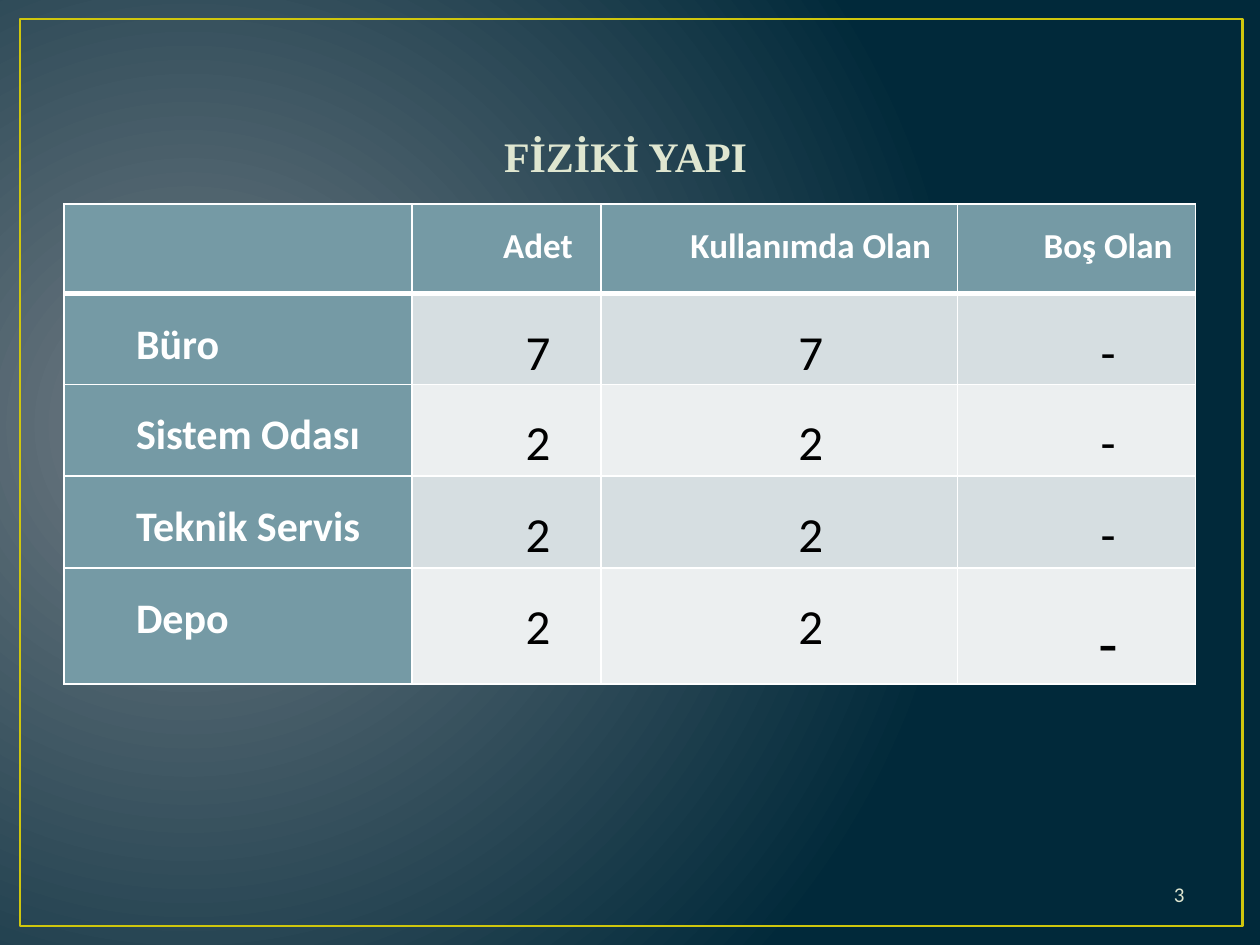
from lxml.etree import SubElement
from pptx import Presentation
from pptx.dml.color import RGBColor
from pptx.enum.shapes import MSO_SHAPE
from pptx.enum.text import MSO_ANCHOR, PP_ALIGN
from pptx.oxml.ns import qn
from pptx.util import Inches, Pt

COLORS = {
    "glow": "717C84",
    "night": "01293A",
    "frame": "CFC60D",
    "cream": "DFE6D0",
    "teal": "759AA5",
    "band_dark": "D6DEE1",
    "band_light": "ECEFF0",
    "white": "FFFFFF",
    "black": "000000",
}
COLUMN_WIDTHS = [2.76, 1.5, 2.83, 1.89]
ROW_HEIGHTS = [0.71, 0.72, 0.73, 0.73, 0.92]
ROWS = [
    ["", "Adet", "Kullanımda Olan", "Boş Olan"],
    ["Büro", "7", "7", "-"],
    ["Sistem Odası", "2", "2", "-"],
    ["Teknik Servis", "2", "2", "-"],
    ["Depo", "2", "2", "-"],
]


def color(name):
    return RGBColor.from_string(COLORS[name])


def set_font(paragraph, name, size, color_name, bold=False):
    font = paragraph.font
    font.name, font.size, font.bold = name, Pt(size), bold
    font.color.rgb = color(color_name)


def set_background(slide):
    """Fill the background with a circular gradient centred at the left."""
    fill = slide.background.fill
    fill.gradient()
    for stop, name in zip(fill.gradient_stops, ("glow", "night")):
        stop.color.rgb = color(name)
    gradient = slide.background._cSld.find(".//" + qn("a:gradFill"))
    gradient.remove(gradient.find(qn("a:lin")))
    circle = SubElement(gradient, qn("a:path"), path="circle")
    SubElement(circle, qn("a:fillToRect"), l="15000", t="50000", r="85000", b="60000")


def add_frame(slide):
    frame = slide.shapes.add_shape(
        MSO_SHAPE.RECTANGLE, Inches(0.16), Inches(0.15), Inches(9.7), Inches(7.2)
    )
    frame.shadow.inherit = False
    frame.fill.background()
    frame.line.color.rgb = color("frame")
    frame.line.width = Pt(1.5)


def add_text(slide, text, box, alignment, anchor=MSO_ANCHOR.TOP):
    shape = slide.shapes.add_textbox(*map(Inches, box))
    shape.text_frame.word_wrap = True
    shape.text_frame.vertical_anchor = anchor
    paragraph = shape.text_frame.paragraphs[0]
    paragraph.text = text
    paragraph.alignment = alignment
    return paragraph


def add_borders(cell, top=1, bottom=1):
    properties = cell._tc.get_or_add_tcPr()
    for side, width in (("L", 1), ("R", 1), ("T", top), ("B", bottom)):
        line = SubElement(properties, qn(f"a:ln{side}"), w=str(Pt(width)))
        fill = SubElement(line, qn("a:solidFill"))
        SubElement(fill, qn("a:srgbClr"), val=COLORS["white"])


def fill_cell(cell, text, row, column):
    is_header, is_label = row == 0, column == 0
    add_borders(cell, top=3 if row == 1 else 1, bottom=3 if is_header else 1)
    cell.fill.solid()
    band = "band_dark" if row % 2 else "band_light"
    cell.fill.fore_color.rgb = color("teal" if is_header or is_label else band)
    if not text:
        return

    cell.margin_left = cell.margin_right = Inches(0.07)
    cell.margin_top = cell.margin_bottom = 0
    paragraph = cell.text_frame.paragraphs[0]
    paragraph.text = text
    paragraph.line_spacing = 1.5
    paragraph._p.get_or_add_pPr().set("marL", str(Inches(0.5)))
    paragraph.alignment = PP_ALIGN.JUSTIFY if is_label else PP_ALIGN.CENTER
    if column == len(COLUMN_WIDTHS) - 1:
        paragraph.space_after = Pt(10)
    if is_header:
        set_font(paragraph, "Calibri", 20, "white", bold=True)
    elif is_label:
        set_font(paragraph, "Calibri", 24, "white", bold=True)
    else:
        is_last = row == len(ROWS) - 1 and text == "-"
        set_font(paragraph, "Calibri", 36 if is_last else 28, "black")


def add_space_table(slide):
    table = slide.shapes.add_table(
        len(ROWS), len(COLUMN_WIDTHS), Inches(0.51), Inches(1.62),
        Inches(sum(COLUMN_WIDTHS)), Inches(sum(ROW_HEIGHTS)),
    ).table
    for column, width in zip(table.columns, COLUMN_WIDTHS):
        column.width = Inches(width)
    for row, height in zip(table.rows, ROW_HEIGHTS):
        row.height = Inches(height)
    for row, texts in enumerate(ROWS):
        for column, text in enumerate(texts):
            fill_cell(table.cell(row, column), text, row, column)


def main():
    presentation = Presentation()
    presentation.slide_width, presentation.slide_height = Inches(10), Inches(7.5)
    slide = presentation.slides.add_slide(presentation.slide_layouts[6])
    set_background(slide)
    add_frame(slide)

    title = add_text(slide, "FİZİKİ YAPI", (0.43, 0.99, 9.07, 5.71), PP_ALIGN.CENTER)
    title.space_before = Pt(4.8)
    set_font(title, "Times New Roman", 24, "cream", bold=True)

    add_space_table(slide)

    number = add_text(
        slide, "3", (7.17, 6.9, 2.33, 0.4), PP_ALIGN.RIGHT, MSO_ANCHOR.MIDDLE
    )
    set_font(number, "Calibri", 12, "cream")
    presentation.save("out.pptx")


if __name__ == "__main__":
    main()
